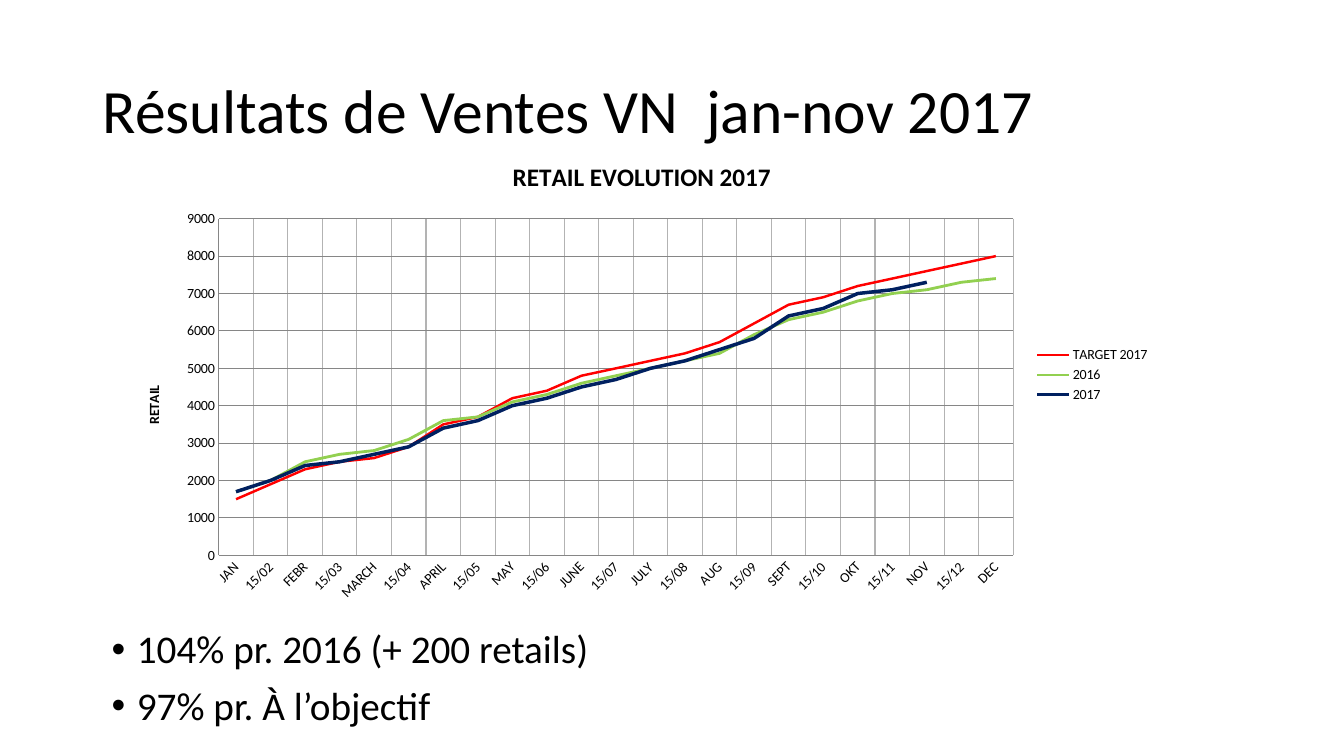
"""Build the 2017 retail results slide with its line chart."""
import pptx
import pptx.chart.data
import pptx.dml.color
import pptx.enum.chart
import pptx.enum.text
import pptx.oxml
import pptx.oxml.ns
import pptx.util
from pptx.util import Inches

COLORS = {
    "text": "000000", "target": "FF0000", "previous": "92D050",
    "current": "002060", "axis": "868686", "vertical_grid": "B3B3B3",
}
CHART_PLACE = (1.23, 1.39, 10.28, 4.66)
PERIODS = [
    "JAN", "15/02", "FEBR", "15/03", "MARCH", "15/04", "APRIL", "15/05",
    "MAY", "15/06", "JUNE", "15/07", "JULY", "15/08", "AUG", "15/09",
    "SEPT", "15/10", "OKT", "15/11", "NOV", "15/12", "DEC",
]
RETAIL_SERIES = [
    ("TARGET 2017", "target", 1.75,
     [1500, 1900, 2300, 2500, 2600, 2900, 3500, 3700, 4200, 4400, 4800, 5000,
      5200, 5400, 5700, 6200, 6700, 6900, 7200, 7400, 7600, 7800, 8000]),
    ("2016", "previous", 2,
     [1700, 2000, 2500, 2700, 2800, 3100, 3600, 3700, 4100, 4300, 4600, 4800,
      5000, 5200, 5400, 5900, 6300, 6500, 6800, 7000, 7100, 7300, 7400]),
    ("2017", "current", 2.5,
     [1700, 2000, 2400, 2500, 2700, 2900, 3400, 3600, 4000, 4200, 4500, 4700,
      5000, 5200, 5500, 5800, 6400, 6600, 7000, 7100, 7300, None, None]),
]


class SlideBuilder:
    """Hold the text style and the current slide."""

    def __init__(self, slide):
        self.slide = slide
        self.font_name = "Calibri"

    def color(self, name):
        return pptx.dml.color.RGBColor.from_string(COLORS[name])

    def style_font(self, font, size, bold=False):
        font.name = self.font_name
        font.size = pptx.util.Pt(size)
        font.bold = bold
        font.color.rgb = self.color("text")

    def style_line(self, line, color, width):
        line.color.rgb = self.color(color)
        line.width = pptx.util.Pt(width)

    def text(self, place, lines, size, anchor, bullets=False):
        box = self.slide.shapes.add_textbox(*map(Inches, place))
        frame = box.text_frame
        frame.word_wrap = True
        frame.vertical_anchor = anchor
        frame.text = "\n".join(lines)
        for index, para in enumerate(frame.paragraphs):
            para.line_spacing = 0.9
            if index:
                para.space_before = pptx.util.Pt(10)
            if bullets:
                self.bullet(para)
            for span in para.runs:
                self.style_font(span.font, size)

    def bullet(self, para):
        properties = para._p.get_or_add_pPr()
        properties.set("marL", str(Inches(0.25)))
        properties.set("indent", str(Inches(-0.25)))
        namespace = pptx.oxml.ns.nsdecls("a")
        for markup in (f'<a:buFont {namespace} typeface="Arial"/>',
                       f'<a:buChar {namespace} char="•"/>'):
            properties.append(pptx.oxml.parse_xml(markup))

    def place_part(self, element, index, target="", **lengths):
        for old in element.findall(pptx.oxml.ns.qn("c:layout")):
            element.remove(old)
        _, _, width, height = CHART_PLACE
        totals = {"x": width, "y": height, "w": width, "h": height}
        inner = f'<c:layoutTarget val="{target}"/>' if target else ""
        inner += "".join(f'<c:{key}Mode val="edge"/>' for key in "xy")
        inner += "".join(f'<c:{key} val="{length / totals[key]}"/>'
                         for key, length in lengths.items())
        element.insert(index, pptx.oxml.parse_xml(
            f'<c:layout {pptx.oxml.ns.nsdecls("c")}>'
            f'<c:manualLayout>{inner}</c:manualLayout></c:layout>'))

    def chart_title(self, title, text, size, x, y):
        title.text_frame.text = text
        self.style_font(title.text_frame.paragraphs[0].runs[0].font, size, True)
        self.place_part(title._element, 1, x=x, y=y)

    def style_axis(self, axis, grid_color):
        axis.has_major_gridlines = True
        self.style_line(axis.major_gridlines.format.line, grid_color, 0.75)
        self.style_line(axis.format.line, "axis", 0.75)
        axis.major_tick_mark = pptx.enum.chart.XL_TICK_MARK.NONE
        axis.minor_tick_mark = pptx.enum.chart.XL_TICK_MARK.NONE
        self.style_font(axis.tick_labels.font, 10)

    def line_chart(self, categories, series_list):
        data = pptx.chart.data.CategoryChartData()
        data.categories = categories
        for name, _, _, values in series_list:
            data.add_series(name, values)
        chart = self.slide.shapes.add_chart(
            pptx.enum.chart.XL_CHART_TYPE.LINE, *map(Inches, CHART_PLACE), data).chart
        self.style_font(chart.font, 10)
        chart.has_title = True
        self.chart_title(chart.chart_title, "RETAIL EVOLUTION 2017", 18, 3.81, 0.14)
        plot = chart.plots[0]
        plot.vary_by_categories = False
        for series, (_, color, width, _) in zip(plot.series, series_list):
            series.smooth = False
            series.marker.style = pptx.enum.chart.XL_MARKER_STYLE.NONE
            self.style_line(series.format.line, color, width)

        self.style_axis(chart.category_axis, "vertical_grid")
        label_body = chart.category_axis._element.find(
            pptx.oxml.ns.qn("c:txPr")).find(pptx.oxml.ns.qn("a:bodyPr"))
        label_body.set("rot", "-2700000")
        label_body.set("vert", "horz")
        value_axis = chart.value_axis
        self.style_axis(value_axis, "axis")
        value_axis.minimum_scale = 0
        value_axis.maximum_scale = 9000
        value_axis.major_unit = 1000
        value_axis.has_title = True
        self.chart_title(value_axis.axis_title, "RETAIL", 10, 0.18, 2.41)
        title_body = value_axis.axis_title.text_frame._txBody.bodyPr
        title_body.set("rot", "-5400000")
        title_body.set("vert", "horz")

        chart.has_legend = True
        chart.legend.position = pptx.enum.chart.XL_LEGEND_POSITION.RIGHT
        chart.legend.include_in_layout = False
        self.style_font(chart.legend.font, 10)
        plot_area = chart._chartSpace.chart.plotArea
        self.place_part(plot_area, 0, "inner", x=0.94, y=0.78, w=7.88, h=3.34)


def main():
    deck = pptx.Presentation()
    deck.slide_width = Inches(13.33)
    deck.slide_height = Inches(7.5)
    builder = SlideBuilder(deck.slides.add_slide(deck.slide_layouts[6]))
    anchors = pptx.enum.text.MSO_ANCHOR
    builder.text((0.92, 0.4, 11.5, 1.45), ["Résultats de Ventes VN  jan-nov 2017"],
                 44, anchors.MIDDLE)
    builder.text((1.01, 6.2, 9, 1.15),
                 ["104% pr. 2016 (+ 200 retails)", "97% pr. À l’objectif"],
                 28, anchors.TOP, bullets=True)
    builder.line_chart(PERIODS, RETAIL_SERIES)
    deck.save("out.pptx")


if __name__ == "__main__":
    main()
